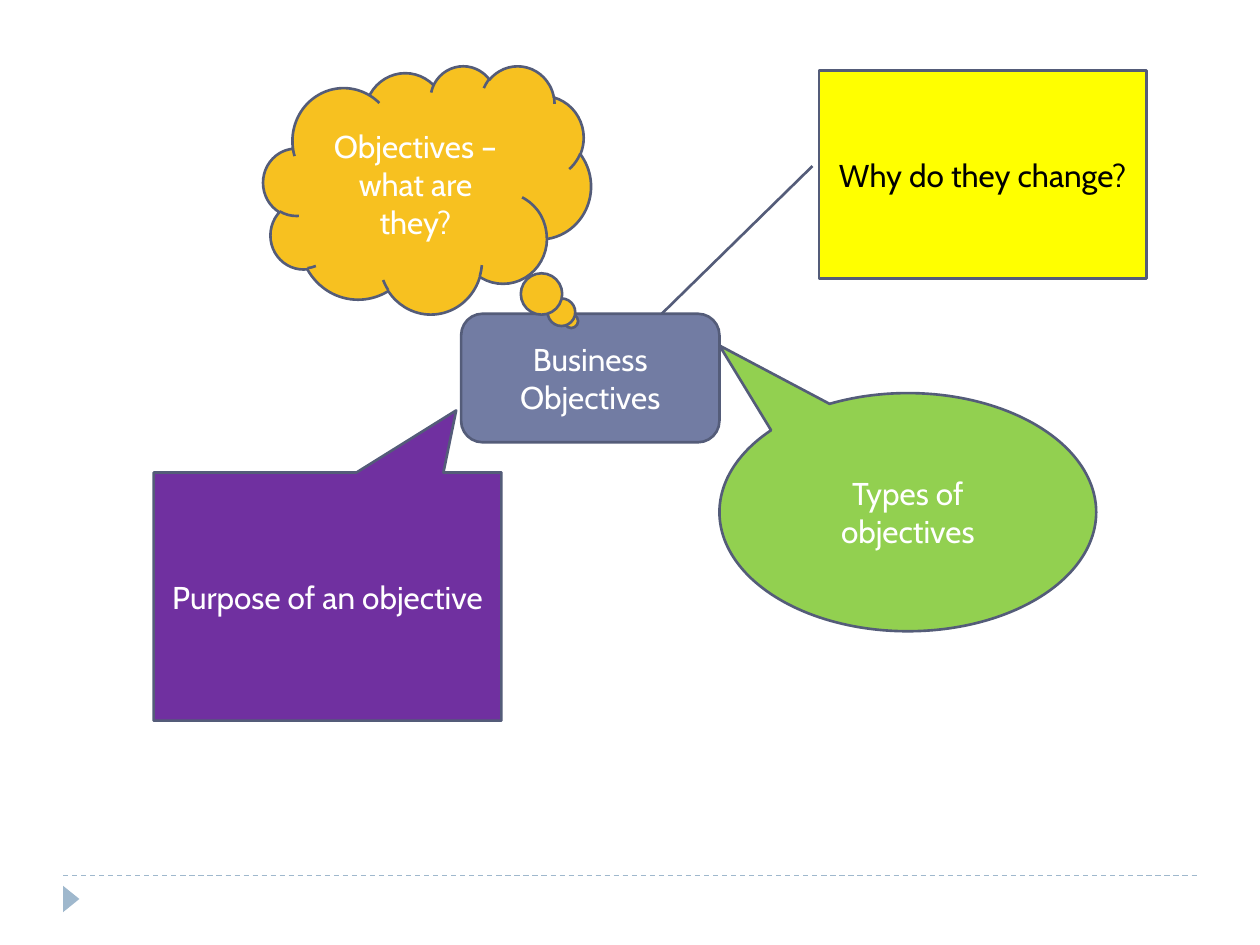
"""Build a mind map slide of callouts around business objectives."""
from dataclasses import dataclass

from pptx import Presentation
from pptx.dml.color import RGBColor
from pptx.enum.dml import MSO_LINE
from pptx.enum.shapes import MSO_CONNECTOR, MSO_SHAPE as SHAPE
from pptx.enum.text import MSO_ANCHOR, PP_ALIGN
from pptx.oxml.ns import qn
from pptx.util import Inches, Pt

COLORS = {
    "outline": "545C79", "accent": "9FB8CD", "slate": "727CA3",
    "gold": "F7C120", "green": "92D050", "purple": "7030A0",
    "yellow": "FFFF00", "white": "FFFFFF", "black": "000000",
}
FONT = {"name": "Cabin", "size": Pt(18)}
FRAME = {"word_wrap": True, "vertical_anchor": MSO_ANCHOR.MIDDLE}


@dataclass
class Bubble:
    text: str
    shape: SHAPE
    box: tuple[float, float, float, float]
    fill: str
    adjustments: tuple[float, ...] = ()
    color: str = "white"


BUBBLES = [
    Bubble("Business Objectives", SHAPE.ROUNDED_RECTANGLE,
           (3.66, 2.49, 2.05, 1.02), "slate"),
    Bubble("Objectives – what are they?", SHAPE.CLOUD_CALLOUT,
           (2.09, 0.52, 2.6, 1.97), "gold", (0.44, 0.53)),
    Bubble("Types of objectives", SHAPE.OVAL_CALLOUT,
           (5.71, 3.12, 2.99, 1.89), "green", (-0.5, -0.7)),
    Bubble("Purpose of an objective", SHAPE.RECTANGULAR_CALLOUT,
           (1.22, 3.75, 2.76, 1.97), "purple", (0.37, -0.75)),
    Bubble("Why do they change?", SHAPE.LINE_CALLOUT_1,
           (6.5, 0.56, 2.6, 1.65), "yellow", (0.46, -0.02, 1.17, -0.48), "black"),
]


def rgb(name: str) -> RGBColor:
    return RGBColor.from_string(COLORS[name])


def set_all(target, values: dict) -> None:
    for key, value in values.items():
        setattr(target, key, value)


def add_filled(slide, shape: SHAPE, box: tuple, fill: str):
    sp = slide.shapes.add_shape(shape, *map(Inches, box))
    sp.shadow.inherit = False
    sp.fill.solid()
    sp.fill.fore_color.rgb = rgb(fill)
    return sp


def add_bubble(slide, bubble: Bubble) -> None:
    sp = add_filled(slide, bubble.shape, bubble.box, bubble.fill)
    sp.line.color.rgb = rgb("outline")
    sp.line.width = Pt(1.5)
    for i, value in enumerate(bubble.adjustments):
        sp.adjustments[i] = value
    set_all(sp.text_frame, FRAME)
    p = sp.text_frame.paragraphs[0]
    p.alignment = PP_ALIGN.CENTER
    r = p.add_run()
    r.text = bubble.text
    set_all(r.font, FONT)
    r.font.color.rgb = rgb(bubble.color)


def add_footer(slide) -> None:
    rule = slide.shapes.add_connector(
        MSO_CONNECTOR.STRAIGHT, *map(Inches, (0.5, 6.95, 9.5, 6.95)))
    rule.line.color.rgb = rgb("accent")
    set_all(rule.line, {"width": Pt(0.75), "dash_style": MSO_LINE.DASH})
    sp_pr = rule._element.spPr
    sp_pr.append(sp_pr.makeelement(qn("a:effectLst"), {}))
    marker = add_filled(slide, SHAPE.ISOSCELES_TRIANGLE,
                        (0.46, 7.07, 0.21, 0.13), "accent")
    marker.line.fill.background()
    marker.rotation = 90


def main() -> None:
    prs = Presentation()
    set_all(prs, {"slide_width": Inches(10), "slide_height": Inches(7.5)})
    slide = prs.slides.add_slide(prs.slide_layouts[6])
    add_footer(slide)
    for bubble in BUBBLES:
        add_bubble(slide, bubble)
    prs.save("out.pptx")


if __name__ == "__main__":
    main()
